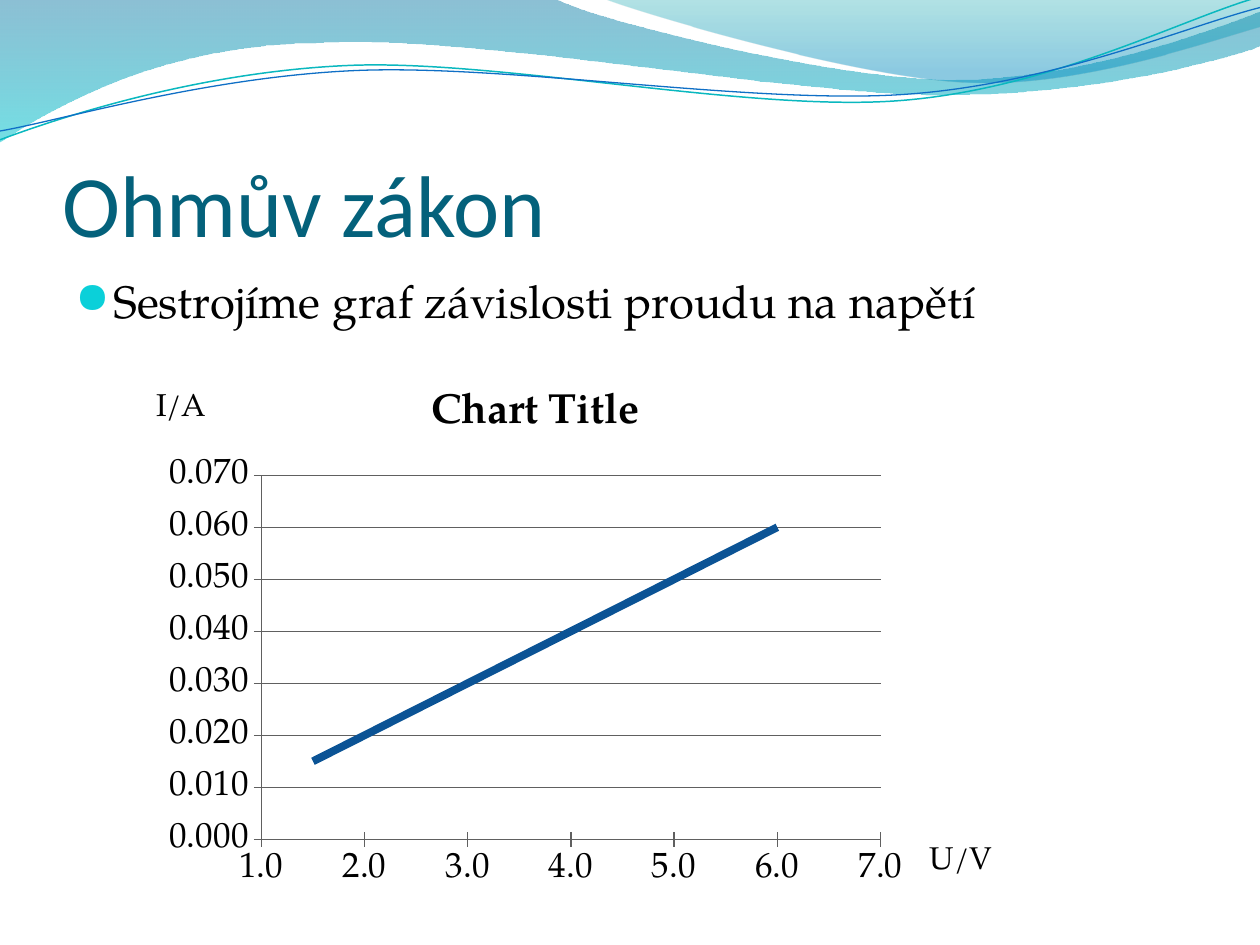
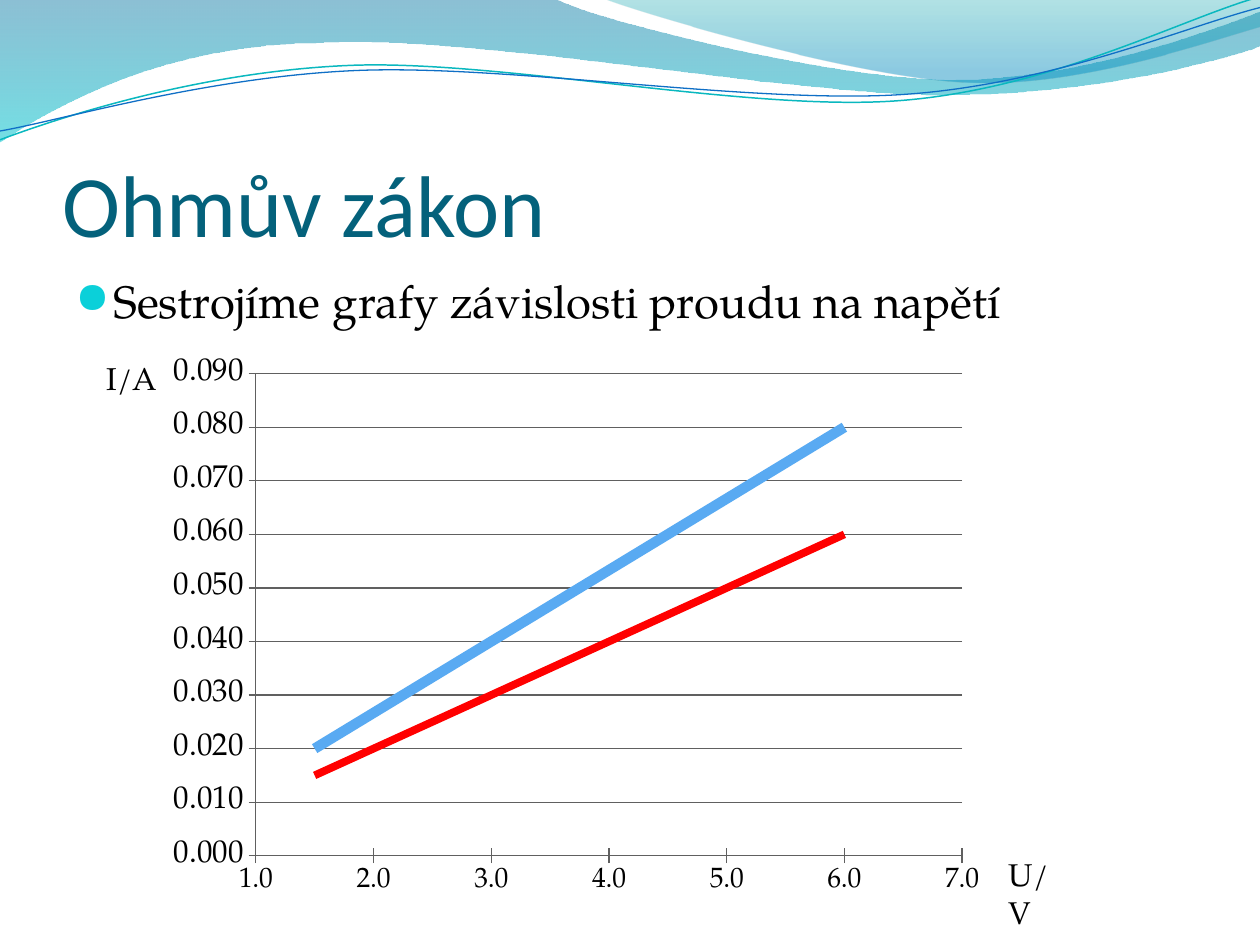
from collections import namedtuple

from lxml import etree
from pptx import Presentation, util as u
from pptx.chart.data import XyChartData
from pptx.dml.color import RGBColor
from pptx.enum import chart as ch, text
from pptx.oxml import parse_xml
from pptx.oxml.ns import nsdecls, qn

WIDTH, HEIGHT = u.Inches(10), u.Inches(7.5)
COLS = 100                      # square grid cells: 100 columns, 75 rows
CELL = WIDTH // COLS

HEAD_FONT, BODY_FONT, BULLET_FONT = "Calibri", "TeX Gyre Pagella", "OpenSymbol"
BLACK = RGBColor(0x00, 0x00, 0x00)
GREY = RGBColor(0x60, 0x60, 0x60)
TITLE = RGBColor(0x04, 0x61, 0x7B)
BULLET = RGBColor(0x0B, 0xD0, 0xD9)
TEAL = RGBColor(0x0A, 0xB8, 0xBF)
BLUE = RGBColor(0x0F, 0x6F, 0xC6)
NAVY = RGBColor(0x0B, 0x53, 0x95)
SKY = RGBColor(0x59, 0xAA, 0xF2)
RED = RGBColor(0xFF, 0x00, 0x00)
DEEP_SEA = RGBColor(0x00, 0x74, 0xA1)
LAGOON = RGBColor(0x00, 0xC6, 0xCF)
GREEN_SEA = RGBColor(0x00, 0xA1, 0xA9)
OPEN_SEA = RGBColor(0x00, 0x8B, 0xBF)

Box = namedtuple("Box", "x y w h")
Line = namedtuple("Line", "color width currents")
HEADER = Box(0, 0, 100, 11.3)
TITLE_BOX = Box(5, 7.7, 90, 12.5)
BODY_BOX = Box(5, 21.2, 90, 48)

# Outlines in cells: a start, then one-point lines or three-point curves.
MAIN_WAVE = [(0, -0.1), [(44, -0.1)],
             [(47.6, 1.7), (66.4, 6.3), (75.8, 6.3)],
             [(85.3, 6.3), (95.8, 2.6), (100, 0.9)], [(100.1, 3.6)],
             [(98.3, 4.4), (87, 7.6), (74.6, 7.5)],
             [(62.2, 7.5), (38.2, 2.8), (25.7, 3.4)],
             [(12.9, 3.5), (4.6, 8.3), (-0.1, 11.3)]]
RIGHT_WAVE = [(47.9, -0.1), [(50.9, 1.1), (68.2, 6.2), (76.9, 6.5)],
              [(85.6, 6.9), (96.1, 3.2), (100, 2.1)], [(100, 0)]]
TEAL_LINE = [(0, 11.1), [(4.8, 9.3), (15.8, 5.7), (27.7, 5.2)],
             [(39.5, 4.7), (59.3, 8.9), (71.3, 8)],
             [(83.3, 7.1), (93.8, 1.5), (99.8, -0.2)]]
BLUE_LINE = [(0, 10.4), [(4.7, 9.6), (16.4, 6.1), (28.3, 5.6)],
             [(40.3, 5.1), (59.7, 8.3), (71.7, 7.5)],
             [(83.6, 6.7), (94.1, 2.1), (100, 0.6)]]

VOLTAGES = (1.5, 3, 4.5, 6)
LOW_CURRENTS = (0.015, 0.03, 0.045, 0.06)
HIGH_CURRENTS = (0.02, 0.04, 0.06, 0.08)


def cells(*values):
    return [round(v * CELL) for v in values]


def add_outline(slide, box, outline, closed):
    """Freeform whose three-point segments become cubic curves."""
    start, *segments = outline
    points = [cells(box.x + x, box.y + y)
              for x, y in [start] + [point for seg in segments for point in seg]]
    builder = slide.shapes.build_freeform(*points[0])
    builder.add_line_segments(points[1:], close=closed)
    sp = builder.convert_to_shape()
    sp.shadow.inherit = False
    steps = iter(sp._element.findall(".//" + qn("a:lnTo")))
    for segment in segments:
        group = [next(steps) for _ in segment]
        if len(group) == 3:
            group[0].tag = qn("a:cubicBezTo")
            for step in group[1:]:
                group[0].append(step[0])
                step.getparent().remove(step)
    return sp


def add_wave(slide, box, outline, stops):
    """Filled wave; stops are (position, colour, opacity in percent)."""
    sp = add_outline(slide, box, outline, True)
    sp.line.fill.background()
    sp.fill.gradient()
    sp.fill.gradient_angle = 270
    for stop, (position, color, _) in zip(sp.fill.gradient_stops, stops):
        stop.position = position
        stop.color.rgb = color
    tints = sp._element.spPr.findall(".//" + qn("a:srgbClr"))
    for tint, (_, _, opacity) in zip(tints, stops):
        etree.SubElement(tint, qn("a:alpha"), val=str(opacity * 1000))


def add_header(slide, box):
    add_wave(slide, box, MAIN_WAVE, [(0, DEEP_SEA, 45), (1, LAGOON, 55)])
    add_wave(slide, box, RIGHT_WAVE, [(0, GREEN_SEA, 30), (0.8, OPEN_SEA, 45)])
    for outline, color, width in ((TEAL_LINE, TEAL, 0.85), (BLUE_LINE, BLUE, 0.75)):
        sp = add_outline(slide, box, outline, False)
        sp.fill.background()
        sp.line.color.rgb = color
        sp.line.width = u.Pt(width)


def move_to_master(prs, slide):
    """Hand the slide's shapes over to the master, so every slide shows them."""
    for sp in list(slide.shapes):
        prs.slide_master.shapes._spTree.append(sp._element)


def add_text(slide, box, words, size=18, font=BODY_FONT, color=BLACK,
             anchor=text.MSO_ANCHOR.TOP, insets=(1, 0.5, 1, 0.5)):
    tf = slide.shapes.add_textbox(*cells(*box)).text_frame
    tf.word_wrap = True
    tf.vertical_anchor = anchor
    tf.margin_left, tf.margin_top, tf.margin_right, tf.margin_bottom = cells(*insets)
    p = tf.paragraphs[0]
    r = p.add_run()
    r.text = words
    r.font.size, r.font.name = u.Pt(size), font
    r.font.color.rgb = color
    return p


def add_bullet(p, indent):
    p.space_before = u.Pt(5.2)
    props = p._p.get_or_add_pPr()
    props.set("marL", str(indent))
    props.set("indent", str(-indent))
    color = etree.SubElement(props, qn("a:buClr"))
    etree.SubElement(color, qn("a:srgbClr"), val=str(BULLET))
    etree.SubElement(props, qn("a:buSzPct"), val="95000")
    etree.SubElement(props, qn("a:buFont"), typeface=BULLET_FONT)
    etree.SubElement(props, qn("a:buChar"), char="●")


def style_axis(axis, low, high, step, number_format, size):
    axis.minimum_scale, axis.maximum_scale, axis.major_unit = low, high, step
    axis.major_tick_mark = ch.XL_TICK_MARK.CROSS
    axis.minor_tick_mark = ch.XL_TICK_MARK.NONE
    axis.format.line.color.rgb = GREY
    axis.format.line.width = u.Pt(0.75)
    labels = axis.tick_labels
    labels.number_format, labels.number_format_is_linked = number_format, False
    labels.font.size = u.Pt(size)


def set_plot_area(chart, percents):
    """Fix the inner plot area as percents of the chart's box."""
    area = chart._chartSpace.find(".//" + qn("c:plotArea"))
    for old in area.findall(qn("c:layout")):
        area.remove(old)
    sizes = "".join(f'<c:{tag} val="{percent / 100:.3f}"/>'
                    for tag, percent in zip("xywh", percents))
    area.insert(0, parse_xml(
        f'<c:layout {nsdecls("c")}><c:manualLayout><c:layoutTarget val="inner"/>'
        f'<c:xMode val="edge"/><c:yMode val="edge"/>{sizes}'
        '</c:manualLayout></c:layout>'))


def add_graph(slide, box, lines, top, plot, sizes, title=None):
    """Current against voltage; sizes are those of the x and y labels."""
    data = XyChartData()
    for i, line in enumerate(lines, 1):
        series = data.add_series(f"Series {i}")
        for point in zip(VOLTAGES, line.currents):
            series.add_data_point(*point)
    chart = slide.shapes.add_chart(
        ch.XL_CHART_TYPE.XY_SCATTER_LINES_NO_MARKERS, *cells(*box), data).chart
    chart.font.name, chart.font.size = BODY_FONT, u.Pt(sizes[0])
    chart.font.color.rgb = BLACK
    chart.has_legend = False
    chart.has_title = title is not None
    if title:
        r = chart.chart_title.text_frame.paragraphs[0].add_run()
        r.text = title
        r.font.size, r.font.bold, r.font.name = u.Pt(24), True, BODY_FONT
        r.font.color.rgb = BLACK
    volts, amps = chart.category_axis, chart.value_axis
    style_axis(volts, 1, 7, 1, "0.0", sizes[0])
    style_axis(amps, 0, top, 0.01, "0.000", sizes[1])
    volts.has_major_gridlines = False
    amps.has_major_gridlines = True
    amps.major_gridlines.format.line.color.rgb = GREY
    amps.major_gridlines.format.line.width = u.Pt(0.75)
    for series, line in zip(chart.plots[0].series, lines):
        series.format.line.color.rgb = line.color
        series.format.line.width = u.Pt(line.width)
    set_plot_area(chart, plot)


def fill_graph_slide(slide, statement, graph_box, amps_box, volts_box, **graph):
    add_text(slide, TITLE_BOX, "Ohmův zákon", size=50, font=HEAD_FONT, color=TITLE,
             anchor=text.MSO_ANCHOR.BOTTOM, insets=(0, 0.5, 0, 0))
    add_bullet(add_text(slide, BODY_BOX, statement, size=26), 3 * CELL)
    add_graph(slide, graph_box, **graph)
    add_text(slide, amps_box, "I/A")
    add_text(slide, volts_box, "U/V")


def main():
    prs = Presentation()
    prs.slide_width, prs.slide_height = WIDTH, HEIGHT
    blank = prs.slide_layouts[6]
    one_line, two_lines = (prs.slides.add_slide(blank) for _ in range(2))
    add_header(one_line, HEADER)
    move_to_master(prs, one_line)
    fill_graph_slide(
        one_line, "Sestrojíme graf závislosti proudu na napětí",
        Box(12.2, 28.8, 60.6, 42.5), Box(11.4, 30.1, 13.4, 4), Box(72.8, 66, 9.5, 4),
        lines=[Line(NAVY, 4.5, LOW_CURRENTS)], top=0.07,
        plot=(14.1, 21, 81.1, 68), sizes=(20, 20), title="Chart Title")
    fill_graph_slide(
        two_lines, "Sestrojíme grafy závislosti proudu na napětí",
        Box(13.8, 28.1, 65, 43.3), Box(7.5, 28, 13.4, 4), Box(79.1, 67.4, 6.6, 4),
        lines=[Line(SKY, 6, HIGH_CURRENTS), Line(RED, 4.5, LOW_CURRENTS)], top=0.09,
        plot=(8.5, 3.6, 87.7, 88.4), sizes=(16, 18))
    prs.save("out.pptx")


if __name__ == "__main__":
    main()
